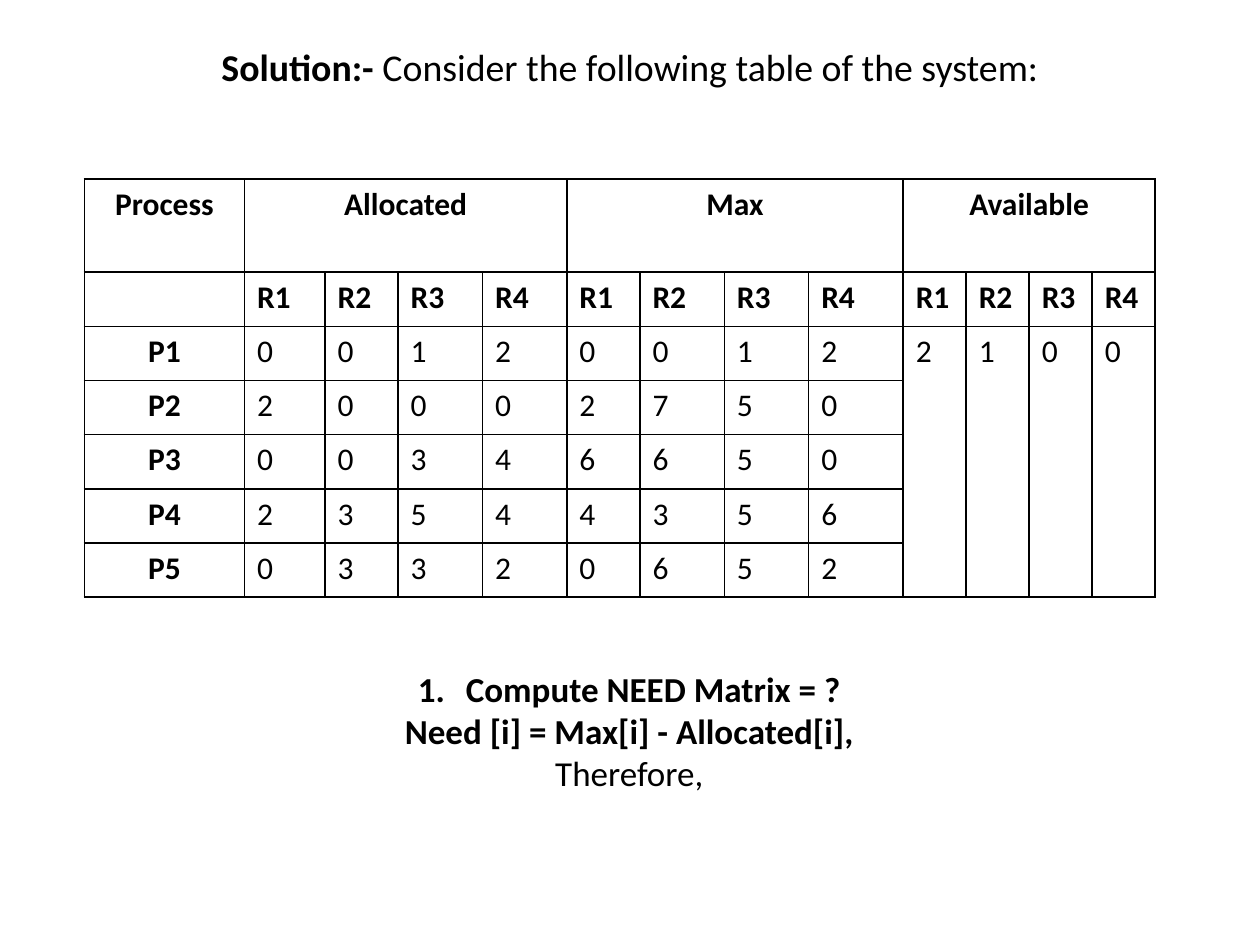
import dataclasses

import lxml.etree
import pptx
import pptx.dml.color
import pptx.enum.text
import pptx.oxml.ns
import pptx.util

Inches = pptx.util.Inches
Pt = pptx.util.Pt
qn = pptx.oxml.ns.qn
CENTER = pptx.enum.text.PP_ALIGN.CENTER


@dataclasses.dataclass(frozen=True)
class Theme:
    ink: str = "000000"
    paper: str = "FFFFFF"
    font: str = "Calibri"
    title: float = 21.6
    cell: float = 18
    note: float = 20
    rule: float = 1


THEME = Theme()
COLS = [1.27, 0.64, 0.58, 0.67, 0.67, 0.58, 0.67, 0.67, 0.75] + [0.5] * 4
ROWS = [0.74] + [0.43] * 6
GROUPS = ["Allocated", "Max", "Available"]
NAMES = ["R1", "R2", "R3", "R4"]
NEEDS = {
    "P1": "00120012",
    "P2": "20002750",
    "P3": "00346650",
    "P4": "23544356",
    "P5": "03320652",
}
FREE = "2100"


def color(code):
    return pptx.dml.color.RGBColor.from_string(code)


def write(para, text, size, bold=False, align=None):
    """Add one run to a paragraph."""
    run = para.add_run()
    run.text = text
    run.font.name = THEME.font
    run.font.size = Pt(size)
    run.font.bold = bold
    run.font.color.rgb = color(THEME.ink)
    if align is not None:
        para.alignment = align


def add_box(slide, left, top, width, height):
    shape = slide.shapes.add_textbox(
        Inches(left), Inches(top), Inches(width), Inches(height))
    shape.text_frame.word_wrap = True
    return shape.text_frame


def add_title(slide, left, top, width, height):
    para = add_box(slide, left, top, width, height).paragraphs[0]
    write(para, "Solution:- ", THEME.title, bold=True, align=CENTER)
    write(para, "Consider the following table of the system:", THEME.title)


def style(cell):
    """Give a cell a plain fill and a rule on each side."""
    props = cell._tc.get_or_add_tcPr()
    for side in ("a:lnL", "a:lnR", "a:lnT", "a:lnB"):
        line = lxml.etree.SubElement(props, qn(side), w=str(Pt(THEME.rule)))
        fill = lxml.etree.SubElement(line, qn("a:solidFill"))
        lxml.etree.SubElement(fill, qn("a:srgbClr"), val=THEME.ink)
    cell.fill.solid()
    cell.fill.fore_color.rgb = color(THEME.paper)


def add_grid(slide, left, top):
    frame = slide.shapes.add_table(
        len(ROWS), len(COLS), Inches(left), Inches(top),
        Inches(sum(COLS)), Inches(sum(ROWS)))
    table = frame.table
    table.first_row = table.horz_banding = False
    for col, width in zip(table.columns, COLS):
        col.width = Inches(width)
    for row, height in zip(table.rows, ROWS):
        row.height = Inches(height)
    for cell in table.iter_cells():
        style(cell)

    def put(row, col, text, **form):
        para = table.cell(row, col).text_frame.paragraphs[0]
        write(para, text, THEME.cell, **form)

    put(0, 0, "Process", bold=True, align=CENTER)
    span = len(NAMES)
    for i, group in enumerate(GROUPS):
        start = 1 + i * span
        table.cell(0, start).merge(table.cell(0, start + span - 1))
        put(0, start, group, bold=True, align=CENTER)
        for col, name in enumerate(NAMES, start):
            put(1, col, name, bold=True)
    for row, (name, counts) in enumerate(NEEDS.items(), 2):
        put(row, 0, name, bold=True, align=CENTER)
        for col, count in enumerate(counts, 1):
            put(row, col, count)
    for col, count in enumerate(FREE, 1 + 2 * span):
        table.cell(2, col).merge(table.cell(len(ROWS) - 1, col))
        put(2, col, count)


def add_steps(slide, left, top, width, height):
    frame = add_box(slide, left, top, width, height)
    first = frame.paragraphs[0]
    write(first, "Compute NEED Matrix = ?", THEME.note,
          bold=True, align=CENTER)
    props = first._p.get_or_add_pPr()
    props.set("marL", str(Inches(0.38)))
    props.set("indent", str(-Inches(0.38)))
    lxml.etree.SubElement(props, qn("a:buFont"), typeface=THEME.font)
    lxml.etree.SubElement(props, qn("a:buAutoNum"), type="arabicPeriod")
    write(frame.add_paragraph(), "Need [i] = Max[i] - Allocated[i],",
          THEME.note, bold=True, align=CENTER)
    write(frame.add_paragraph(), "Therefore,", THEME.note, align=CENTER)


def main():
    deck = pptx.Presentation()
    deck.slide_width = Inches(10)
    deck.slide_height = Inches(7.5)
    slide = deck.slides.add_slide(deck.slide_layouts[6])
    add_title(slide, 0.5, 0.3, 9, 0.78)
    add_grid(slide, 0.67, 1.42)
    add_steps(slide, 0.58, 5.25, 8.83, 1.11)
    deck.save("out.pptx")


if __name__ == "__main__":
    main()
